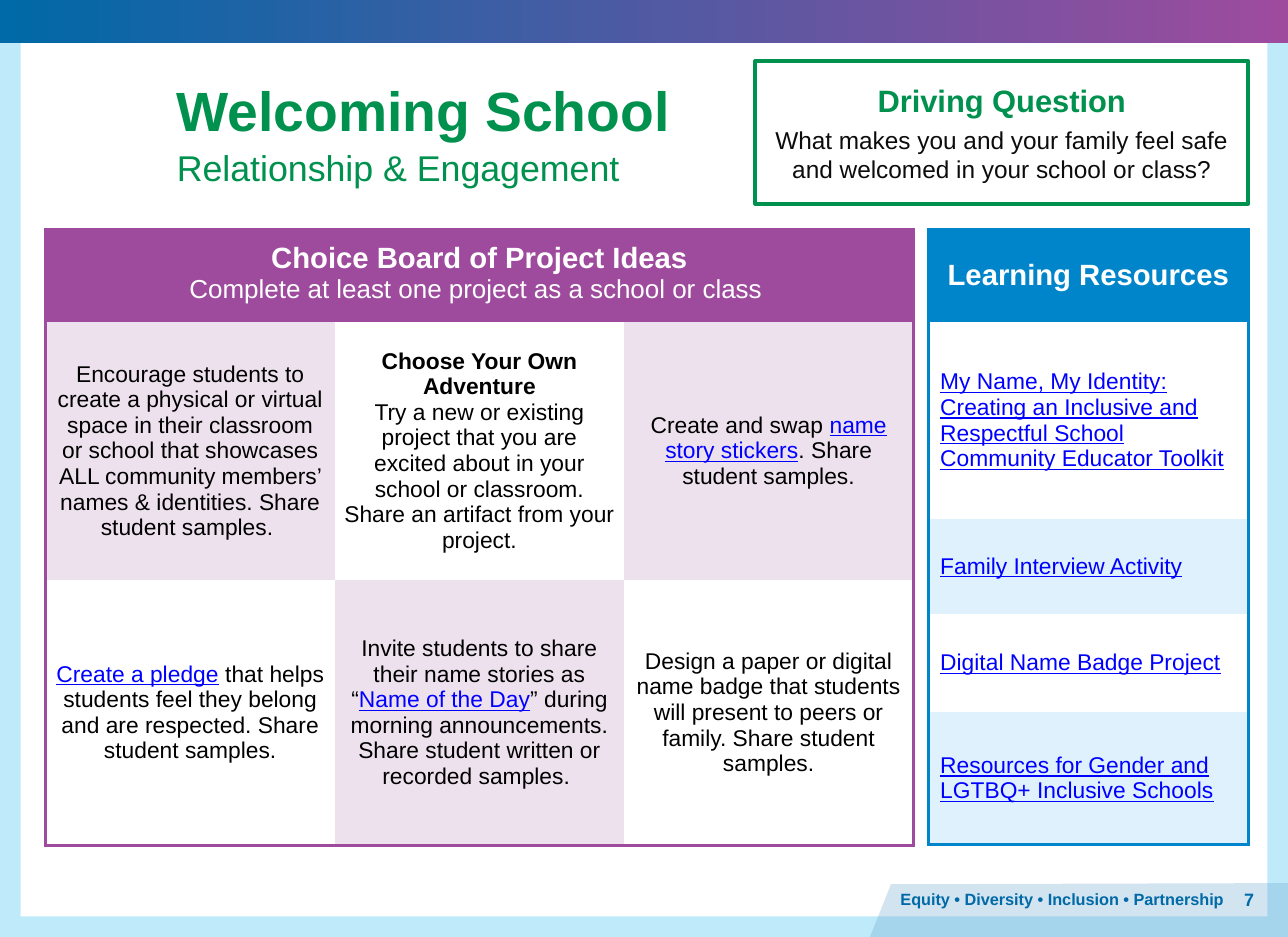
"""Build the Welcoming School choice board slide."""
from lxml import etree
from pptx import Presentation
from pptx.dml.color import RGBColor
from pptx.enum.shapes import MSO_SHAPE
from pptx.enum.text import MSO_ANCHOR, MSO_AUTO_SIZE, PP_ALIGN
from pptx.oxml.ns import qn
from pptx.util import Inches, Pt

RECT, FRAME = MSO_SHAPE.RECTANGLE, MSO_SHAPE.FRAME
LEFT, CENTER, RIGHT = PP_ALIGN.LEFT, PP_ALIGN.CENTER, PP_ALIGN.RIGHT
TOP, MIDDLE = MSO_ANCHOR.TOP, MSO_ANCHOR.MIDDLE
FIXED = MSO_AUTO_SIZE.NONE

BLACK = RGBColor(0x00, 0x00, 0x00)
INK = RGBColor(0x0C, 0x0C, 0x0C)
WHITE = RGBColor(0xFF, 0xFF, 0xFF)
GREEN = RGBColor(0x00, 0x91, 0x4F)
NAVY = RGBColor(0x00, 0x69, 0xA7)
BLUE = RGBColor(0x00, 0x85, 0xCB)
PALE_BLUE = RGBColor(0xDE, 0xF1, 0xFD)
PURPLE = RGBColor(0x9E, 0x4B, 0x9E)
LILAC = RGBColor(0xEE, 0xE1, 0xEE)
LINK_BLUE = RGBColor(0x00, 0x00, 0xFF)
SKY = RGBColor(0x00, 0xAD, 0xEE)
STEEL = RGBColor(0x66, 0xA5, 0xCA)

COLS, ROWS = 110, 80


def style(size, color, bold=False, underline=False):
    """Return the font values of one text style."""
    return {"name": "Arial", "size": Pt(size), "bold": bold, "underline": underline, "color": color}


TITLE, SUBTITLE = style(34, GREEN, True), style(22, GREEN)
QUESTION_HEAD, QUESTION = style(19, GREEN, True), style(15, INK)
HEAD, SUBHEAD = style(18, WHITE, True), style(16, WHITE)
BODY, STRONG = style(14, BLACK), style(14, BLACK, True)
LINK = style(14, LINK_BLUE, underline=True)
FOOTER, PAGE = style(10, NAVY, True), style(11, NAVY, True)


class Board:
    """Draw styled elements on one slide with a grid of columns and rows."""

    def __init__(self, prs):
        self.w, self.h = prs.slide_width, prs.slide_height
        self.s = prs.slides.add_slide(prs.slide_layouts[5])

    def x(self, cols):
        """Convert grid columns to a length."""
        return round(self.w * cols / COLS)

    def y(self, rows):
        """Convert grid rows to a length."""
        return round(self.h * rows / ROWS)

    def box(self, left, top, width, height):
        """Convert a grid box to lengths."""
        return self.x(left), self.y(top), self.x(width), self.y(height)

    def put_text(self, tf, paragraphs, align, gap=0):
        """Fill a text frame with paragraphs of styled runs."""
        for i, runs in enumerate(paragraphs):
            p = tf.add_paragraph() if i else tf.paragraphs[0]
            p.alignment = align
            if i:
                p.space_before = Pt(gap)
            for text, fmt in runs:
                r = p.add_run()
                r.text = text
                for key, value in fmt.items():
                    if key == "color":
                        r.font.color.rgb = value
                    else:
                        setattr(r.font, key, value)

    def frame_text(self, sp, paragraphs, align, anchor, inset=0.1, gap=0):
        """Set the frame of a shape and fill in its text."""
        tf = sp.text_frame
        frame = {"word_wrap": True, "auto_size": FIXED, "vertical_anchor": anchor,
                 "margin_left": Inches(0.1), "margin_right": Inches(0.1),
                 "margin_top": Inches(inset), "margin_bottom": Inches(inset)}
        for key, value in frame.items():
            setattr(tf, key, value)
        self.put_text(tf, paragraphs, align, gap)

    def title(self, box, paragraphs):
        """Move and fill the title placeholder."""
        sp = self.s.shapes.title
        sp.left, sp.top, sp.width, sp.height = self.box(*box)
        self.frame_text(sp, paragraphs, LEFT, TOP, gap=2)

    def text(self, box, paragraphs, align, anchor):
        """Add a text box."""
        sp = self.s.shapes.add_textbox(*self.box(*box))
        self.frame_text(sp, paragraphs, align, anchor, inset=0.05)

    def tint(self, sp, color, alpha):
        """Give a shape a see-through fill and no line."""
        sp.shadow.inherit = False
        sp.line.fill.background()
        sp.fill.solid()
        sp.fill.fore_color.rgb = color
        rgb = sp._element.spPr.find(".//" + qn("a:srgbClr"))
        etree.SubElement(rgb, qn("a:alpha"), val=str(alpha * 1000))

    def border(self, color, alpha, share):
        """Add a frame around the slide."""
        sp = self.s.shapes.add_shape(FRAME, 0, 0, self.w, self.h)
        sp.adjustments[0] = share
        self.tint(sp, color, alpha)

    def band(self, box, start, end):
        """Add a bar with a horizontal gradient."""
        sp = self.s.shapes.add_shape(RECT, *self.box(*box))
        sp.shadow.inherit = False
        sp.line.fill.background()
        sp.fill.gradient()
        sp.fill.gradient_angle = 0
        for stop, color in zip(sp.fill.gradient_stops, (start, end)):
            stop.color.rgb = color

    def outline(self, points, color, alpha):
        """Add a closed freeform through grid points."""
        first, *rest = [(self.x(c), self.y(r)) for c, r in points]
        builder = self.s.shapes.build_freeform(*first)
        builder.add_line_segments(rest, close=True)
        self.tint(builder.convert_to_shape(), color, alpha)

    def card(self, box, color, paragraphs):
        """Add an outlined card with centred text."""
        sp = self.s.shapes.add_shape(RECT, *self.box(*box))
        sp.shadow.inherit = False
        sp.fill.background()
        sp.line.color.rgb = color
        sp.line.width = Pt(2.25)
        self.frame_text(sp, paragraphs, CENTER, MIDDLE, gap=4)

    def edges(self, cell, color, visible):
        """Draw the visible sides of a cell and hide the others."""
        tcPr = cell._tc.get_or_add_tcPr()
        for i, (side, shown) in enumerate(zip("LRTB", visible)):
            ln = etree.Element(qn(f"a:ln{side}"), w=str(Pt(2.25)))
            if shown:
                fill = etree.SubElement(ln, qn("a:solidFill"))
                etree.SubElement(fill, qn("a:srgbClr"), val=str(color))
            else:
                etree.SubElement(ln, qn("a:noFill"))
            tcPr.insert(i, ln)

    def table(self, at, widths, heights, rows, color, shade, parity, align, margins, head_anchor):
        """Add a table whose one-cell rows span all columns."""
        box = self.box(*at, sum(widths), sum(heights))
        table = self.s.shapes.add_table(len(heights), len(widths), *box).table
        table.first_row = table.horz_banding = False
        for column, width in zip(table.columns, widths):
            column.width = self.x(width)
        for row, height in zip(table.rows, heights):
            row.height = self.y(height)
        last_row, last_col = len(heights) - 1, len(widths) - 1
        for i, contents in enumerate(rows):
            spans = len(contents) == 1
            if spans:
                table.cell(i, 0).merge(table.cell(i, last_col))
            for j in range(last_col + 1):
                cell = table.cell(i, j)
                side, end = margins if i else (0.08, 0.11)
                values = {"margin_left": Inches(side), "margin_right": Inches(side),
                          "margin_top": Inches(end), "margin_bottom": Inches(end),
                          "vertical_anchor": MIDDLE if i else head_anchor}
                for key, value in values.items():
                    setattr(cell, key, value)
                if i == 0 or (i + (0 if spans else j)) % 2 == parity:
                    cell.fill.solid()
                    cell.fill.fore_color.rgb = shade if i else color
                else:
                    cell.fill.background()
                self.edges(cell, color, (j == 0, spans or j == last_col, i == 0, i == last_row))
                if j < len(contents):
                    self.put_text(cell.text_frame, contents[j], align if i else CENTER)


PROJECTS = [
    [[[("Choice Board of Project Ideas", HEAD)],
      [("Complete at least one project as a school or class ", SUBHEAD)]]],
    [[[("Encourage students to create a physical or virtual space in their classroom or school that "
        "showcases ALL community members’ names & identities. Share student samples. ", BODY)]],
     [[("Choose Your Own Adventure", STRONG)],
      [("Try a new or existing project that you are excited about in your school or classroom. "
        "Share an artifact from your project.", BODY)]],
     [[("Create and swap ", BODY), ("name story stickers", LINK), (". Share student samples.", BODY)]]],
    [[[("Create a pledge", LINK),
       (" that helps students feel they belong and are respected. Share student samples.", BODY)]],
     [[("Invite students to share their name stories as “", BODY), ("Name of the Day", LINK),
       ("” during morning announcements. Share student written or recorded samples. ", BODY)]],
     [[("Design a paper or digital name badge that students will present to peers or family. "
        "Share student samples.", BODY)]]],
]
RESOURCES = [[[[("Learning Resources", HEAD)]]]] + [[[[(name, LINK)]]] for name in (
    "My Name, My Identity: Creating an Inclusive and Respectful School Community Educator Toolkit",
    "Family Interview Activity", "Digital Name Badge Project",
    "Resources for Gender and LGTBQ+ Inclusive Schools")]


def main():
    """Build and save the slide."""
    prs = Presentation()
    prs.slide_width, prs.slide_height = Inches(11), Inches(8)
    board = Board(prs)
    board.border(SKY, 25, 0.022)
    board.band((0, 0, COLS, 3.7), NAVY, PURPLE)
    board.outline([(76.1, 75.5), (COLS, 75.4), (COLS, ROWS), (74.3, ROWS)], STEEL, 29)
    board.text((103.4, 75.4, 4.7, 2.7), [[("7", PAGE)]], RIGHT, MIDDLE)
    board.text((75.8, 75.4, 29.8, 2.7),
               [[("Equity • Diversity • Inclusion • Partnership", FOOTER)]], CENTER, TOP)
    board.title((14.1, 5.5, 47, 11.7),
                [[("Welcoming School", TITLE)], [("Relationship & Engagement", SUBTITLE)]])
    board.table((79.3, 19.6), (8.8, 18.5), (7.9, 16.8, 8.1, 8.4, 11.3), RESOURCES,
                BLUE, PALE_BLUE, 0, LEFT, (0.1, 0.1), MIDDLE)
    board.card((64.5, 5.2, 42.1, 12.2), GREEN,
               [[("Driving Question", QUESTION_HEAD)],
                [("What makes you and your family feel safe and welcomed in your school or class?", QUESTION)]])
    board.table((3.9, 19.6), (24.7,) * 3, (7.9, 22, 22.7), PROJECTS,
                PURPLE, LILAC, 1, CENTER, (0.08, 0.11), TOP)
    prs.save("out.pptx")


if __name__ == "__main__":
    main()
